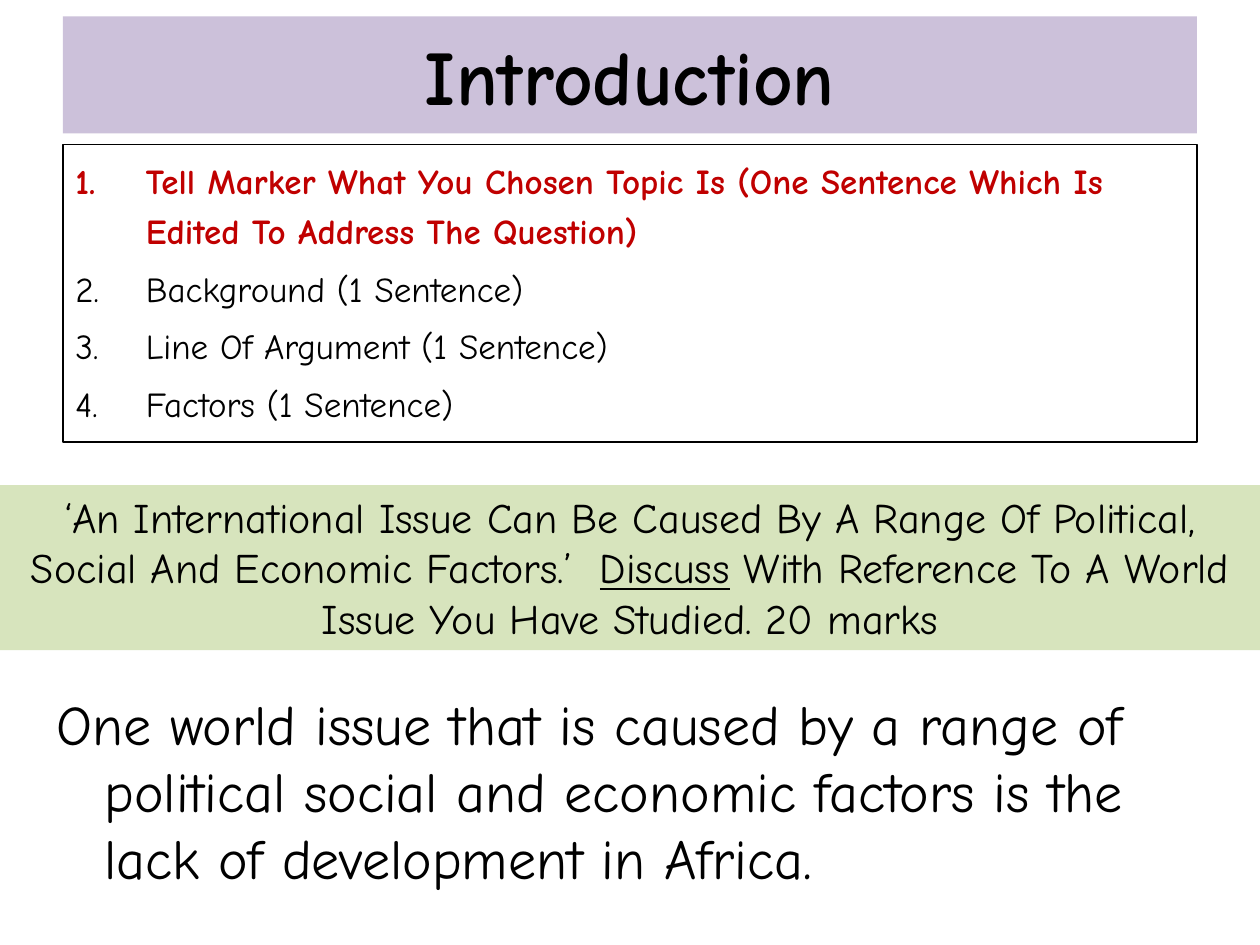
from lxml.etree import SubElement
from pptx import Presentation
from pptx.dml.color import RGBColor
from pptx.enum.text import MSO_ANCHOR as Anchor, PP_ALIGN as Align
from pptx.oxml.ns import qn
from pptx.util import Inches, Pt


def colour(value):
    return RGBColor.from_string(value)


class SlideBuilder:
    """Holds the text style and the current page, and adds elements to it."""

    font = "Comic Neue"
    ink = "000000"
    accent = "C00000"

    def __init__(self, page):
        self.page = page

    def panel(self, left, top, width, height, fill=None, line=None, anchor=Anchor.TOP):
        box = self.page.shapes.add_textbox(
            Inches(left), Inches(top), Inches(width), Inches(height))
        if fill:
            box.fill.solid()
            box.fill.fore_color.rgb = colour(fill)
        if line:
            box.line.color.rgb = colour(line)
            box.line.width = Pt(0.75)
        frame = box.text_frame
        frame.word_wrap = True
        frame.vertical_anchor = anchor
        return frame

    def add_span(self, para, text, size, bold=False, underline=False, ink=None):
        span = para.add_run()
        span.text = text
        font = span.font
        font.name, font.size = self.font, Pt(size)
        font.bold, font.underline = bold, underline
        font.color.rgb = colour(ink or self.ink)

    def hang(self, para, indent):
        properties = para._p.get_or_add_pPr()
        properties.set("marL", str(Inches(indent)))
        properties.set("indent", str(-Inches(indent)))
        return properties

    def title(self, text):
        para = self.panel(0.5, 0.13, 9, 0.93, "CCC1DA", anchor=Anchor.MIDDLE).paragraphs[0]
        para.alignment = Align.CENTER
        self.add_span(para, text, 44, bold=True)

    def numbered_list(self, items, current):
        frame = self.panel(0.5, 1.15, 9, 2.36, line=self.ink)
        for index, item in enumerate(items):
            para = frame.add_paragraph() if index else frame.paragraphs[0]
            para.line_spacing = 1.2
            para.space_before = Pt(4)
            properties = self.hang(para, 0.56)
            SubElement(properties, qn("a:buFont"), typeface="+mj-lt")
            SubElement(properties, qn("a:buAutoNum"), type="arabicPeriod")
            active = index == current
            self.add_span(para, item, 20, bold=active, ink=self.accent if active else None)

    def question(self, before, command, after):
        para = self.panel(0, 3.85, 10, 1.31, "D7E4BD").paragraphs[0]
        para.alignment = Align.CENTER
        for text in (before, command, after):
            self.add_span(para, text, 24, underline=text == command)

    def answer(self, text):
        para = self.panel(0.35, 5.42, 9.29, 1.72).paragraphs[0]
        self.hang(para, 0.38)
        self.add_span(para, text, 32)


def main():
    deck = Presentation()
    deck.slide_width, deck.slide_height = Inches(10), Inches(7.5)
    builder = SlideBuilder(deck.slides.add_slide(deck.slide_layouts[6]))
    builder.title("Introduction")
    builder.numbered_list([
        "Tell Marker What You Chosen Topic Is (One Sentence Which Is "
        "Edited To Address The Question)",
        "Background (1 Sentence)",
        "Line Of Argument (1 Sentence)",
        "Factors (1 Sentence)",
    ], current=0)
    builder.answer("One world issue that is caused by a range of political social "
                   "and economic factors is the lack of development in Africa.")
    builder.question("‘An International Issue Can Be Caused By A Range Of Political, "
                     "Social And Economic Factors.’  ", "Discuss",
                     " With Reference To A World Issue You Have Studied. 20 marks")
    deck.save("out.pptx")


if __name__ == "__main__":
    main()
